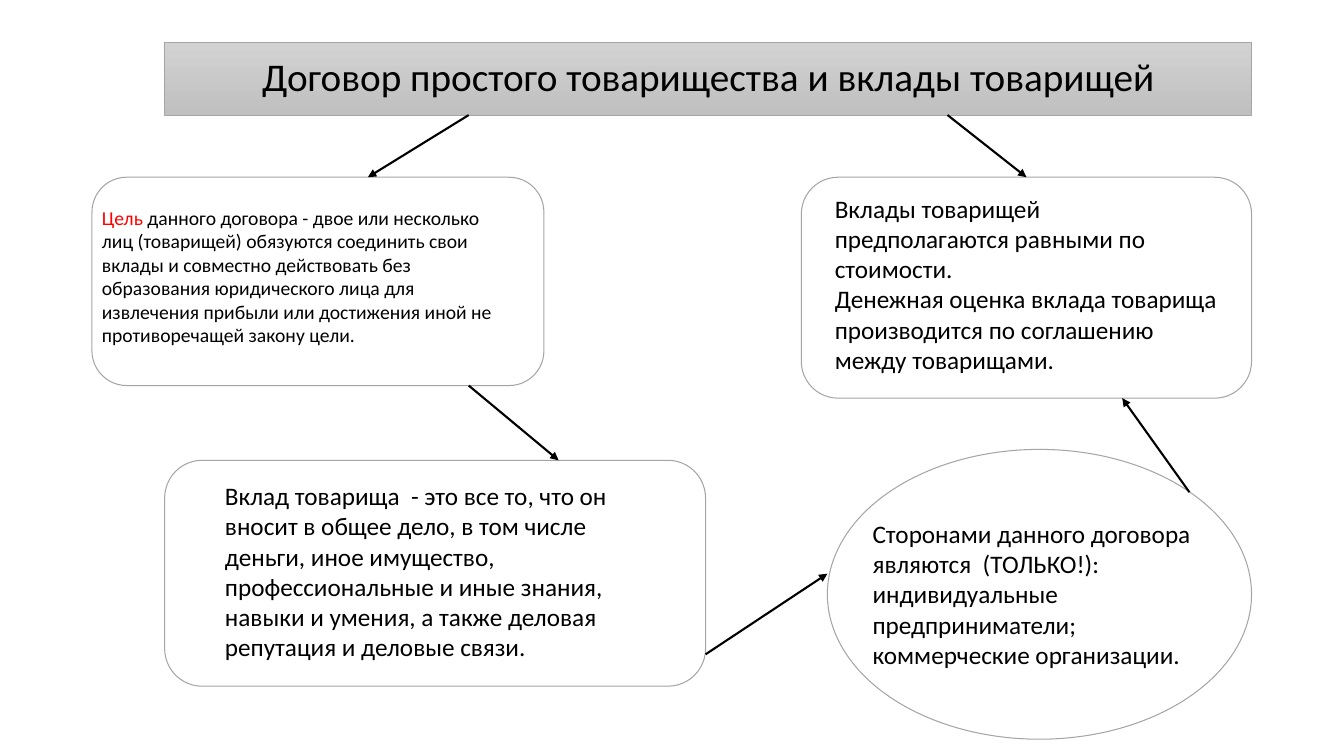
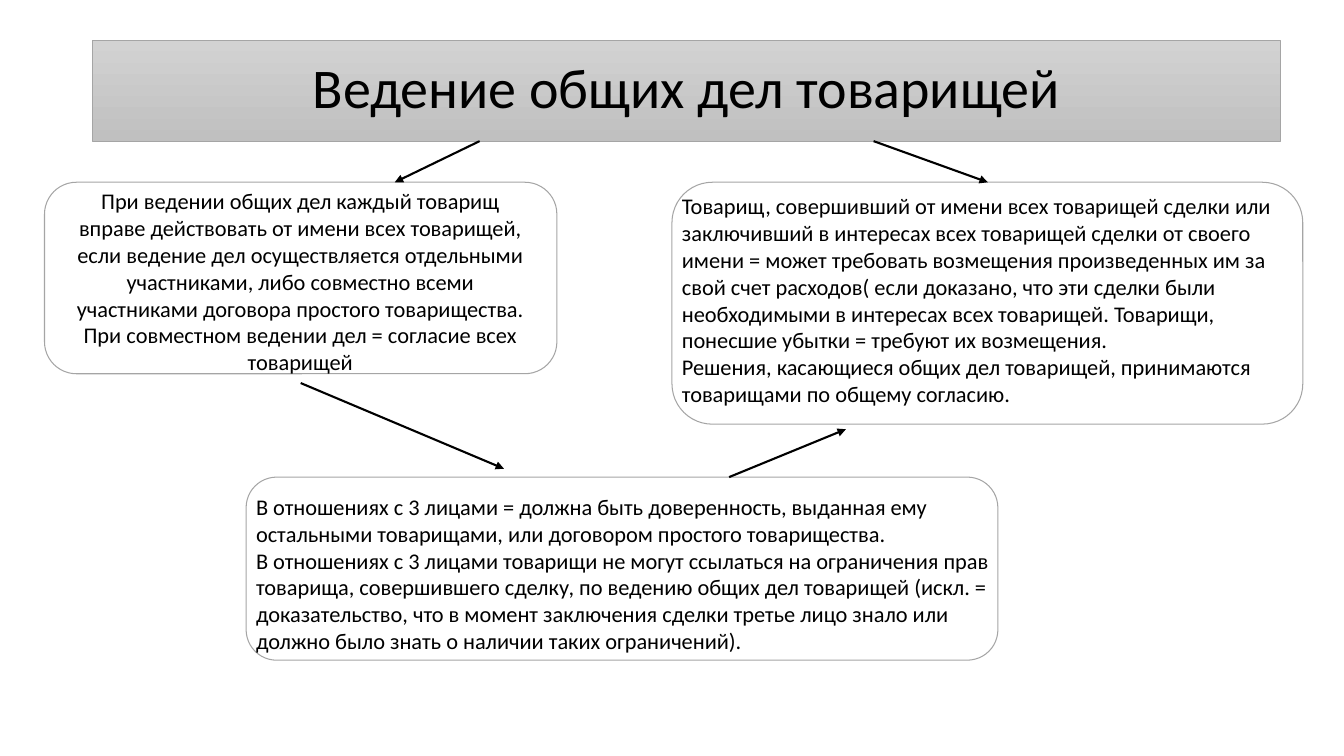
import pptx
import pptx.util
import pptx.dml.color
import pptx.enum.shapes
import pptx.enum.text
import pptx.oxml.ns
import lxml.etree

prs = pptx.Presentation()
prs.slide_width = pptx.util.Inches(13.33)
prs.slide_height = pptx.util.Inches(7.5)
COL = prs.slide_width / 160
ROW = prs.slide_height / 90

FONT = "Calibri"
BLACK, RED, GREY = "000000", "FF0000", "A5A5A5"
BAND = ["D2D2D2", "C0C0C0"]
LEFT = pptx.enum.text.PP_ALIGN.LEFT
CENTER = pptx.enum.text.PP_ALIGN.CENTER
RECT = pptx.enum.shapes.MSO_SHAPE.RECTANGLE
ROUND = pptx.enum.shapes.MSO_SHAPE.ROUNDED_RECTANGLE
OVAL = pptx.enum.shapes.MSO_SHAPE.OVAL


def rgb(value):
    return pptx.dml.color.RGBColor.from_string(value)


def write(tf, text, size=16, align=LEFT, spacing=1.0, lead=""):
    tf.word_wrap = True
    for i, line in enumerate(text.split("\n")):
        p = tf.paragraphs[0] if i == 0 else tf.add_paragraph()
        p.alignment = align
        p.line_spacing = spacing
        parts = [(lead, RED), (line, BLACK)] if lead and i == 0 else [(line, BLACK)]
        for part, color in parts:
            r = p.add_run()
            r.text = part
            r.font.name = FONT
            r.font.size = pptx.util.Pt(size)
            r.font.color.rgb = rgb(color)


slides = [
    {
        "title": ("Договор простого товарищества и вклады товарищей", 28, (19.6, 5, 129.4, 8.75)),
        "boxes": [
            (ROUND, (10.95, 21.1, 53.8, 24.8)),
            (ROUND, (19.6, 54.8, 64.4, 26.9)),
            (ROUND, (95.4, 21.1, 53.6, 26.3)),
            (OVAL, (98.5, 53.5, 50.5, 34.5)),
        ],
        "arrows": [
            (55.8, 13.7, 43.8, 21.1),
            (112.8, 13.7, 122.2, 21.1),
            (55.8, 45.9, 66.5, 54.8),
            (84, 77.9, 98.5, 68.3),
            (141.6, 58.6, 133.6, 47.4),
        ],
        "texts": [
            (
                (10.95, 23.9, 50.4, 18.1),
                " данного договора - двое или несколько лиц (товарищей) обязуются соединить свои "
                "вклады и совместно действовать без образования юридического лица для извлечения "
                "прибыли или достижения иной не противоречащей закону цели.",
                {"size": 14, "lead": "Цель"},
            ),
            (
                (102.7, 61.1, 46.3, 19.4),
                "Сторонами данного договора являются  (ТОЛЬКО!):\n"
                "индивидуальные предприниматели;\n"
                "коммерческие организации.",
                {"size": 18},
            ),
            (
                (25.6, 56.6, 55.4, 23),
                "Вклад товарища  - это все то, что он вносит в общее дело, в том числе деньги, "
                "иное имущество, профессиональные и иные знания, навыки и умения, а также "
                "деловая репутация и деловые связи.",
                {"size": 18},
            ),
            (
                (98.2, 22.4, 48, 23),
                "Вклады товарищей предполагаются равными по стоимости.\n"
                "Денежная оценка вклада товарища производится по соглашению между товарищами.",
                {"size": 18},
            ),
        ],
    },
    {
        "title": ("Ведение общих дел товарищей", 40, (11, 4.8, 141.4, 12)),
        "boxes": [
            (ROUND, (5.3, 21.7, 61, 22.8)),
            (ROUND, (29.3, 56.8, 89.5, 21.8)),
            (ROUND, (80, 21.7, 75.1, 28.8)),
        ],
        "arrows": [
            (57.1, 16.8, 47, 21.7),
            (35.8, 45.6, 60, 55.8),
            (104, 16.8, 117.6, 21.7),
            (86.8, 56.8, 100.7, 51.1),
        ],
        "texts": [
            (
                (7.2, 21.7, 57.1, 23.9),
                "При ведении общих дел каждый товарищ вправе действовать от имени всех товарищей, "
                "если ведение дел осуществляется отдельными участниками, либо совместно всеми "
                "участниками договора простого товарищества.\n"
                "При совместном ведении дел = согласие всех товарищей",
                {"align": CENTER},
            ),
            (
                (29.3, 58.1, 92.9, 20.6),
                "В отношениях с 3 лицами = должна быть доверенность, выданная ему остальными "
                "товарищами, или договором простого товарищества.\n"
                "В отношениях с 3 лицами товарищи не могут ссылаться на ограничения прав товарища, "
                "совершившего сделку, по ведению общих дел товарищей (искл. = доказательство, что "
                "в момент заключения сделки третье лицо знало или должно было знать о наличии "
                "таких ограничений).",
                {},
            ),
            (
                (80, 22.3, 75.1, 27.1),
                "Товарищ, совершивший от имени всех товарищей сделки или заключивший в интересах "
                "всех товарищей сделки от своего имени = может требовать возмещения произведенных "
                "им за свой счет расходов( если доказано, что эти сделки были необходимыми в "
                "интересах всех товарищей. Товарищи, понесшие убытки = требуют их возмещения.\n"
                "Решения, касающиеся общих дел товарищей, принимаются товарищами по общему согласию.",
                {},
            ),
        ],
    },
]

for content in slides:
    s = prs.slides.add_slide(prs.slide_layouts[6])

    title, size, (x, y, w, h) = content["title"]
    sp = s.shapes.add_shape(RECT, int(x * COL), int(y * ROW), int(w * COL), int(h * ROW))
    sp.shadow.inherit = False
    sp.fill.gradient()
    sp.fill.gradient_angle = 270
    for stop, color in zip(sp.fill.gradient_stops, BAND):
        stop.color.rgb = rgb(color)
    sp.line.color.rgb = rgb(GREY)
    sp.line.width = pptx.util.Pt(0.5)
    sp.text_frame.vertical_anchor = pptx.enum.text.MSO_ANCHOR.MIDDLE
    write(sp.text_frame, title, size=size, align=CENTER, spacing=0.9)

    for kind, (x, y, w, h) in content["boxes"]:
        sp = s.shapes.add_shape(kind, int(x * COL), int(y * ROW), int(w * COL), int(h * ROW))
        sp.shadow.inherit = False
        sp.fill.background()
        sp.line.color.rgb = rgb(GREY)
        sp.line.width = pptx.util.Pt(0.75)

    for x1, y1, x2, y2 in content["arrows"]:
        sp = s.shapes.add_connector(
            pptx.enum.shapes.MSO_CONNECTOR.STRAIGHT,
            int(x1 * COL), int(y1 * ROW), int(x2 * COL), int(y2 * ROW),
        )
        sp.line.color.rgb = rgb(BLACK)
        sp.line.width = pptx.util.Pt(1.5)
        ln = sp.line._get_or_add_ln()
        lxml.etree.SubElement(ln, pptx.oxml.ns.qn("a:tailEnd"), type="triangle")
        lxml.etree.SubElement(ln.getparent(), pptx.oxml.ns.qn("a:effectLst"))

    for (x, y, w, h), text, style in content["texts"]:
        sp = s.shapes.add_textbox(int(x * COL), int(y * ROW), int(w * COL), int(h * ROW))
        sp.text_frame.auto_size = pptx.enum.text.MSO_AUTO_SIZE.SHAPE_TO_FIT_TEXT
        write(sp.text_frame, text, **style)

prs.save("out.pptx")
